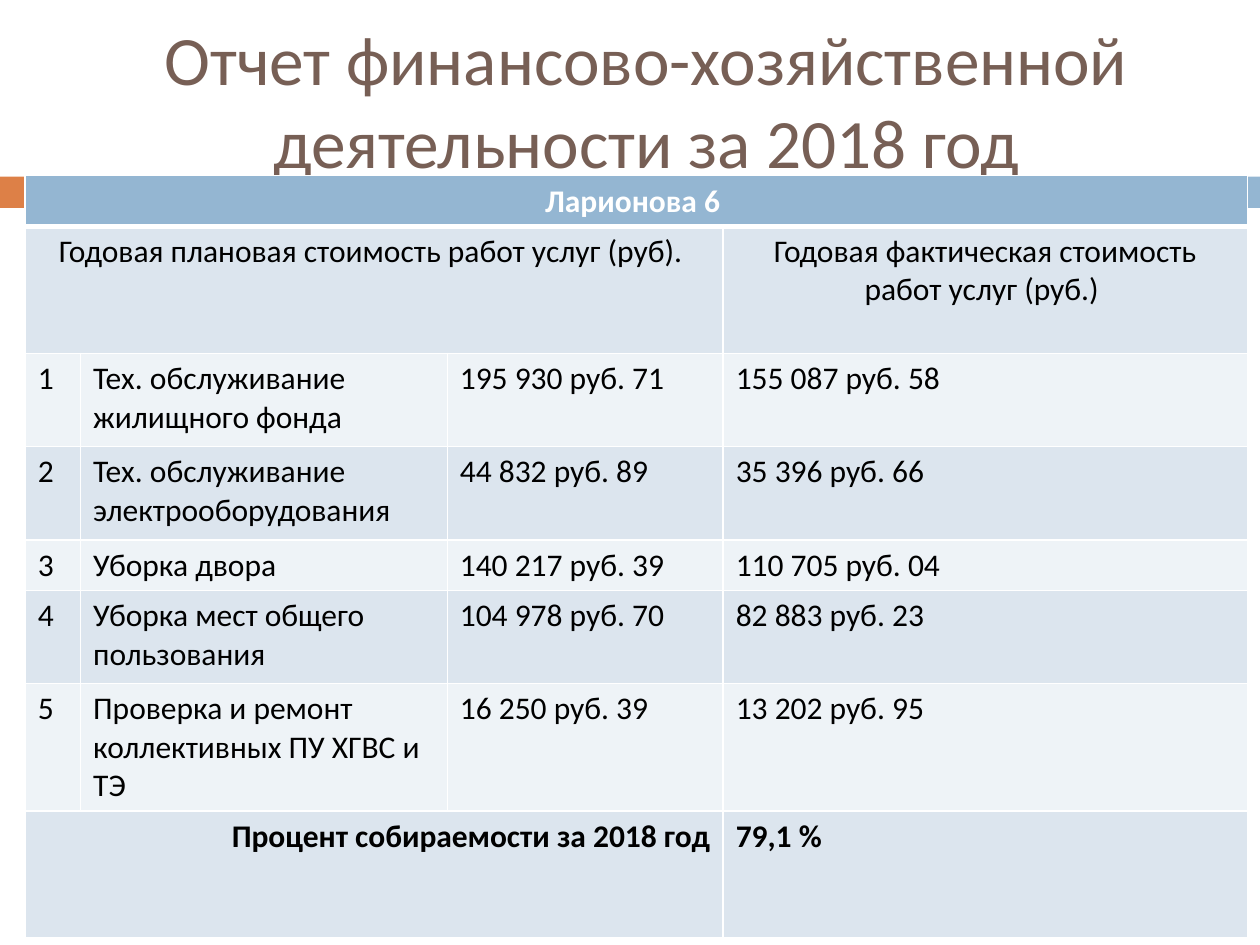
from typing import NamedTuple

from lxml.etree import SubElement
from pptx import Presentation
from pptx.dml.color import RGBColor
from pptx.enum.shapes import MSO_SHAPE
from pptx.enum.text import MSO_ANCHOR, PP_ALIGN
from pptx.oxml.ns import qn
from pptx.util import Inches, Pt

WIDE, HIGH = Inches(10), Inches(7.5)
WHITE, BLACK, BROWN = "FFFFFF", "000000", "775F55"
ORANGE, BLUE = "DD8047", "94B6D2"
BANDS = ("EEF3F7", "DCE5EE")
LEFT, MID, RIGHT = PP_ALIGN.LEFT, PP_ALIGN.CENTER, PP_ALIGN.RIGHT


class Box(NamedTuple):
    """Shares of the slide's width and height."""
    x: float
    y: float
    w: float
    h: float

    def place(self) -> tuple:
        return (int(self.x * WIDE), int(self.y * HIGH),
                int(self.w * WIDE), int(self.h * HIGH))


class Bar(NamedTuple):
    box: Box
    fill: str


class Cell(NamedTuple):
    text: str
    span: int = 1
    align: PP_ALIGN = LEFT
    bold: bool = False


class Work(NamedTuple):
    name: str
    plan: str
    fact: str


BARS = (Bar(Box(0, 0.187, 0.058, 0.033), ORANGE),
        Bar(Box(0.065, 0.187, 0.935, 0.033), BLUE))
TITLE = Box(0.067, 0.033, 0.892, 0.144)
GRID = Box(0.02, 0.186, 0.97, 0.806)
COLS = (0.44, 2.91, 2.19, 4.16)
ROWS = (0.4, 1.01, 0.74, 0.74, 0.4, 0.74, 1.01, 1.01)

WORKS = (
    Work("Тех. обслуживание жилищного фонда", "195 930 руб. 71", "155 087 руб. 58"),
    Work("Тех. обслуживание электрооборудования", "44 832 руб. 89", "35 396 руб. 66"),
    Work("Уборка двора", "140 217 руб. 39", "110 705 руб. 04"),
    Work("Уборка мест общего пользования", "104 978 руб. 70", "82 883 руб. 23"),
    Work("Проверка и ремонт коллективных ПУ ХГВС и ТЭ", "16 250 руб. 39", "13 202 руб. 95"),
)
LINES = (
    (Cell("Ларионова 6 ", 4, MID, True),),
    (Cell("Годовая плановая стоимость работ услуг (руб). ", 3, MID),
     Cell("Годовая фактическая стоимость работ услуг (руб.) ", 1, MID)),
    *((Cell(str(n)), *map(Cell, work)) for n, work in enumerate(WORKS, 1)),
    (Cell("Процент собираемости за 2018 год", 3, RIGHT, True),
     Cell("79,1 %", bold=True)),
)


def tint(code: str) -> RGBColor:
    return RGBColor.from_string(code)


def write(frame, text: str, align: PP_ALIGN, size: float, color: str,
          bold: bool = False) -> None:
    para = frame.paragraphs[0]
    para.alignment = align
    run = para.add_run()
    run.text = text
    style = {"name": "Calibri", "size": Pt(size), "bold": bold}
    for key, value in style.items():
        setattr(run.font, key, value)
    run.font.color.rgb = tint(color)


def draw_bar(slide, bar: Bar) -> None:
    shape = slide.shapes.add_shape(MSO_SHAPE.RECTANGLE, *bar.box.place())
    shape.shadow.inherit = False
    shape.fill.solid()
    shape.fill.fore_color.rgb = tint(bar.fill)
    shape.line.fill.background()


def draw_title(slide, box: Box, text: str) -> None:
    frame = slide.shapes.add_textbox(*box.place()).text_frame
    for key, value in {"word_wrap": True, "vertical_anchor": MSO_ANCHOR.MIDDLE}.items():
        setattr(frame, key, value)
    write(frame, text, MID, 39.6, BROWN)


def edge(cell, sides: dict) -> None:
    """Put white borders before the cell's fill, as the schema orders them."""
    props = cell._tc.get_or_add_tcPr()
    for spot, (side, width) in enumerate(sides.items()):
        line = SubElement(props, qn(f"a:ln{side}"), w=str(Pt(width)))
        paint = SubElement(line, qn("a:solidFill"))
        SubElement(paint, qn("a:srgbClr"), val=WHITE)
        props.insert(spot, line)


def draw_table(slide, box: Box) -> None:
    table = slide.shapes.add_table(len(ROWS), len(COLS), *box.place()).table
    for col, width in zip(table.columns, COLS):
        col.width = Inches(width)
    for row, height in zip(table.rows, ROWS):
        row.height = Inches(height)

    for r, line in enumerate(LINES):
        # Header row, then alternating bands
        fill = BANDS[r % 2] if r else BLUE
        sides = {"L": 1, "R": 1, "T": 3 if r == 1 else 1, "B": 1 if r else 3}
        for c in range(len(COLS)):
            cell = table.cell(r, c)
            cell.fill.solid()
            cell.fill.fore_color.rgb = tint(fill)
            edge(cell, sides)
        c = 0
        for item in line:
            cell = table.cell(r, c)
            if item.span > 1:
                cell.merge(table.cell(r, c + item.span - 1))
            write(cell.text_frame, item.text, item.align, 18,
                  BLACK if r else WHITE, item.bold)
            c += item.span


def main() -> None:
    deck = Presentation()
    deck.slide_width, deck.slide_height = WIDE, HIGH
    slide = deck.slides.add_slide(deck.slide_layouts[6])
    # Accent strip behind the table
    for bar in BARS:
        draw_bar(slide, bar)
    # Heading and report
    draw_title(slide, TITLE, "Отчет финансово-хозяйственной деятельности за 2018 год")
    draw_table(slide, GRID)
    deck.save("out.pptx")


if __name__ == "__main__":
    main()
